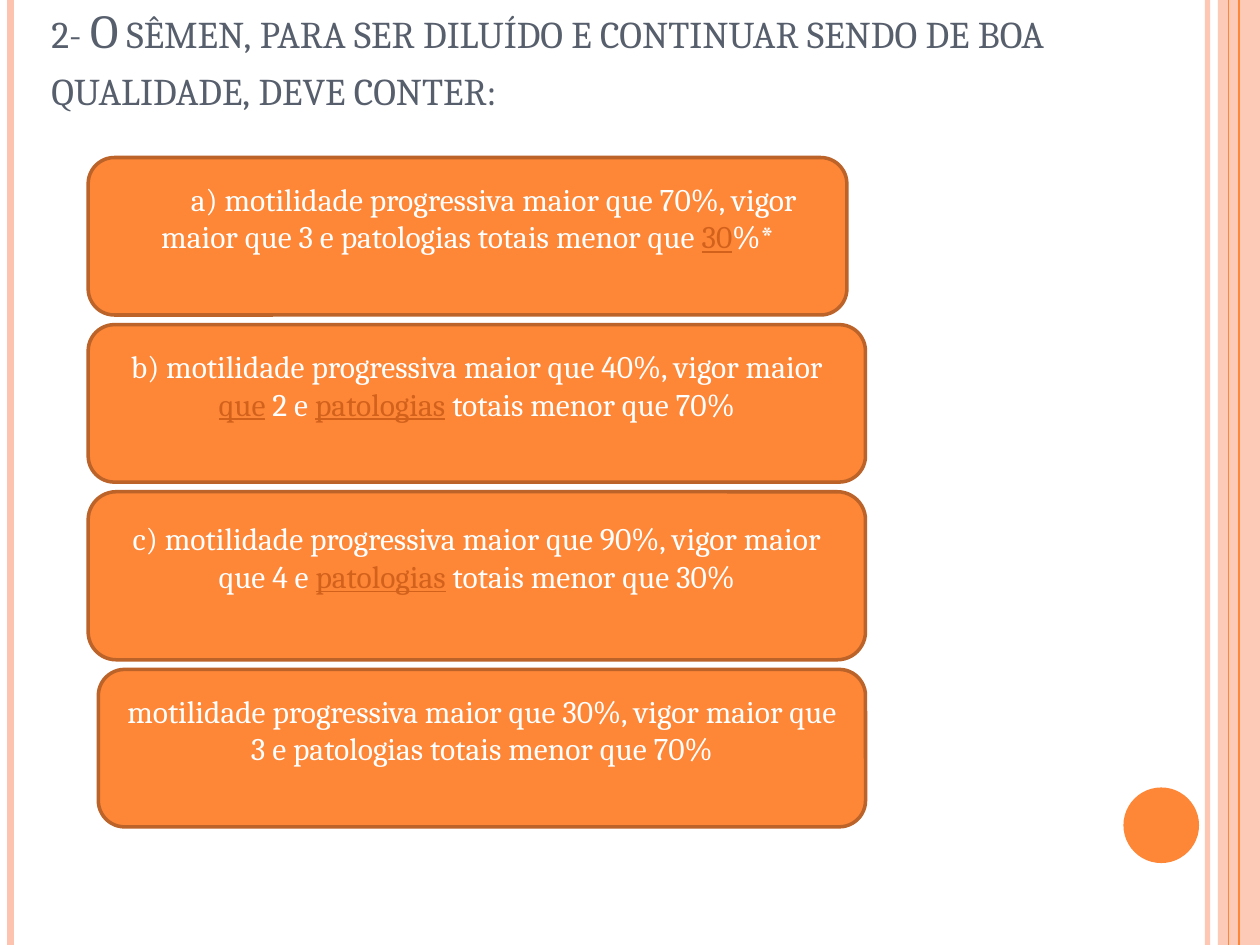
"""Build a quiz slide: a question and four answer cards."""
from collections import namedtuple
from lxml.etree import SubElement
from pptx import Presentation
from pptx.dml.color import RGBColor
from pptx.enum.shapes import MSO_CONNECTOR, MSO_SHAPE
from pptx.enum.text import MSO_ANCHOR, PP_ALIGN
from pptx.oxml.ns import qn
from pptx.util import Pt

Theme = namedtuple("Theme", "font title body ink white orange edge pale link")
theme = Theme("Cambria", Pt(27), Pt(18), *map(RGBColor.from_string, (
    "575F6D", "FFFFFF", "FE8637", "BC6329", "FEC3AE", "D2611C")))


def fade(part, share):
    """Set the opacity, in percent, of a solid colour."""
    color = next(part.iter(qn("a:srgbClr")))
    SubElement(color, qn("a:alpha"), val=str(share * 1000))


def style(run, size, color):
    """Set the font of a run."""
    run.font.name = theme.font
    run.font.size = size
    run.font.color.rgb = color


deck = Presentation()
deck.slide_width, deck.slide_height = Pt(720), Pt(540)
slide = deck.slides.add_slide(deck.slide_layouts[6])
shapes = slide.shapes

band = shapes.add_shape(MSO_SHAPE.RECTANGLE, Pt(696), 0, Pt(24), Pt(540))
dot = shapes.add_shape(MSO_SHAPE.OVAL, Pt(642), Pt(450), Pt(43.2), Pt(43.2))
for shape, color in ((band, theme.pale), (dot, theme.orange)):
    shape.shadow.inherit = False
    shape.fill.solid()
    shape.fill.fore_color.rgb = color
    shape.line.fill.background()
fade(band._element.spPr, 87)

stripes = (
    (690, 3, theme.pale, 93),
    (6, 4.5, theme.pale, 100),
    (708, 1.5, theme.orange, 100),
    (702, 0.75, theme.orange, 100),
)
for left, width, color, share in stripes:
    stripe = shapes.add_connector(
        MSO_CONNECTOR.STRAIGHT, Pt(left), 0, Pt(left), Pt(540))
    stripe.line.width = Pt(width)
    stripe.line.color.rgb = color
    if share < 100:
        fade(stripe._element.spPr, share)
    SubElement(stripe._element.spPr, qn("a:effectLst"))

title = shapes.add_textbox(Pt(22.3), Pt(11.5), Pt(588.5), Pt(90))
frame = title.text_frame
frame.word_wrap = True
frame.vertical_anchor = MSO_ANCHOR.BOTTOM
frame.margin_bottom = Pt(36)
frame.text = ("2- O sêmen, para ser diluído e continuar sendo de boa "
              "qualidade, deve conter:")
run = frame.paragraphs[0].runs[0]
style(run, theme.title, theme.ink)
run.font._element.set("cap", "small")

cards = (
    (50.4, 90, 30, ("a) motilidade progressiva maior que 70%, vigor maior "
                    "que 3 e patologias totais menor que ", "30", "%*")),
    (50.4, 90, 0, ("b) motilidade progressiva maior que 40%, vigor maior ",
                   "que", " 2 e ", "patologias", " totais menor que 70%")),
    (50.4, 96, 0, ("c) motilidade progressiva maior que 90%, vigor maior "
                   "que 4 e ", "patologias", " totais menor que 30%")),
    (56.2, 90, 0, ("motilidade progressiva maior que 30%, vigor maior que "
                   "3 e patologias totais menor que 70%",)),
)
top, gap = 90, 5.5
for left, height, indent, parts in cards:
    right = 484 if indent else 494.6
    card = shapes.add_shape(MSO_SHAPE.ROUNDED_RECTANGLE, Pt(left), Pt(top),
                            Pt(right - left), Pt(height))
    card.shadow.inherit = False
    card.fill.solid()
    card.fill.fore_color.rgb = theme.orange
    card.line.color.rgb = theme.edge
    card.line.width = Pt(2)
    frame = card.text_frame
    frame.word_wrap = True
    frame.vertical_anchor = MSO_ANCHOR.MIDDLE
    frame.margin_bottom = Pt(25)
    line = frame.paragraphs[0]
    line.alignment = PP_ALIGN.CENTER
    if indent:
        line._p.get_or_add_pPr().set("indent", str(Pt(indent)))
    for rank, part in enumerate(parts):
        run = line.add_run()
        run.text = part
        marked = rank % 2 == 1
        style(run, theme.body, theme.link if marked else theme.white)
        run.font.underline = marked
    top += height + gap

deck.save("out.pptx")
